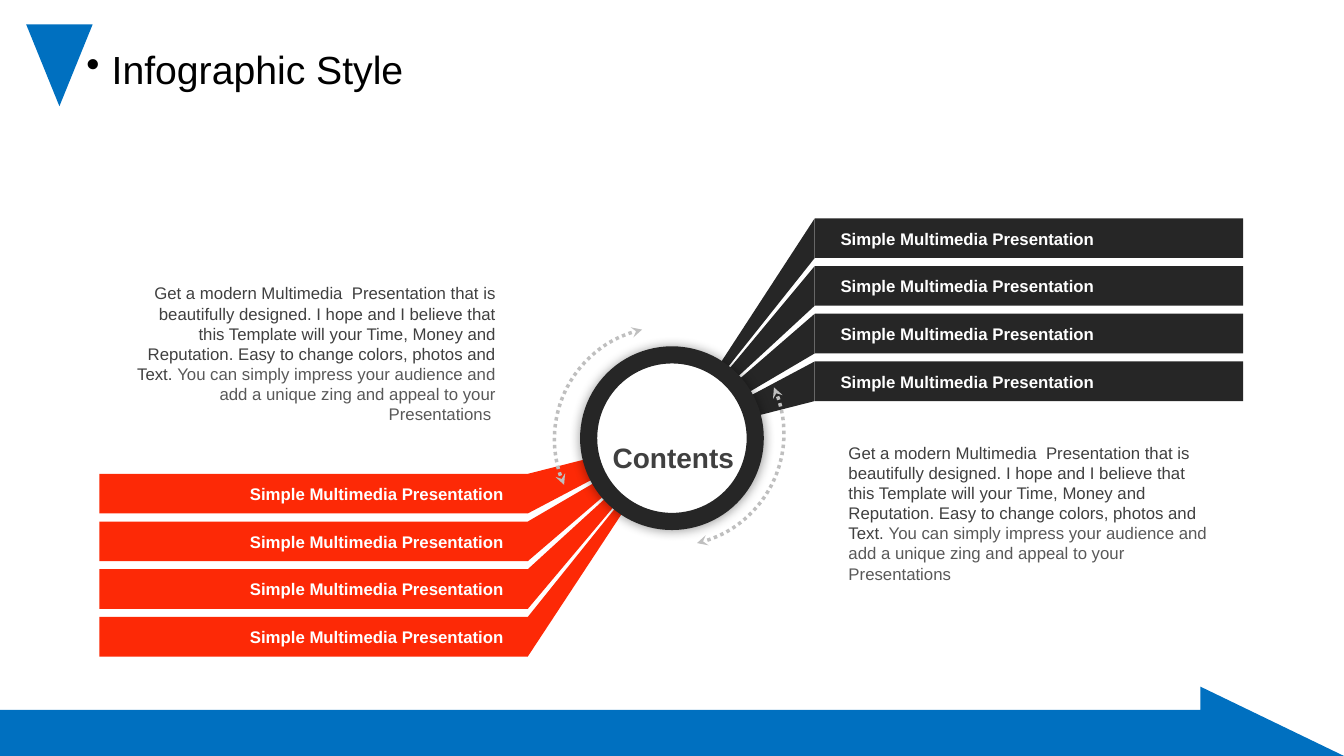
from lxml import etree
from pptx import Presentation
from pptx import util as u
from pptx.dml import color
from pptx.enum import dml, shapes, text
from pptx.oxml import ns

BLUE, DARK, RED, WHITE, GREY = "0070C0", "262626", "FD2906", "FFFFFF", "BFBFBF"
INK, SOFT_INK = "404040", "595959"
HUB = (480, 312.5)
LABEL = "Simple Multimedia Presentation"
BODY = ("Get a modern Multimedia  Presentation that is beautifully designed. "
        "I hope and I believe that this Template will your Time, Money and Reputation. "
        "Easy to change colors, photos and Text. ")
BODY_END = ("You can simply impress your audience and add a unique zing "
            "and appeal to your Presentations")


def rgb(value):
    """Turn a hex string into a colour."""
    return color.RGBColor.from_string(value)


def assign(target, values):
    """Set each named attribute on the target."""
    for name, value in values.items():
        setattr(target, name, value)


def add_xml(parent, tag, **attributes):
    """Append a DrawingML child element."""
    return etree.SubElement(parent, ns.qn(tag), attributes)


def paint(shape, fill=None, line=None, weight=1):
    """Give a shape flat fill and line and no inherited shadow."""
    shape.shadow.inherit = False
    if fill:
        shape.fill.solid()
        shape.fill.fore_color.rgb = rgb(fill)
    else:
        shape.fill.background()
    if line:
        shape.line.color.rgb = rgb(line)
        shape.line.width = u.Pt(weight)
    else:
        shape.line.fill.background()


def add_preset(page, kind, box, **look):
    """Draw a preset shape in a box given in points."""
    shape = page.shapes.add_shape(kind, *map(u.Pt, box))
    paint(shape, **look)
    return shape


def add_outline(page, points, fill):
    """Draw a closed polygon from points."""
    corners = [(u.Pt(x), u.Pt(y)) for x, y in points]
    builder = page.shapes.build_freeform(*corners[0])
    builder.add_line_segments(corners[1:], close=True)
    paint(builder.convert_to_shape(), fill)


def add_text(page, box, spans, size, bold=False, align=text.PP_ALIGN.LEFT):
    """Write coloured spans as one paragraph and return it."""
    frame = page.shapes.add_textbox(*map(u.Pt, box)).text_frame
    assign(frame, {"word_wrap": True, "vertical_anchor": text.MSO_ANCHOR.TOP})
    para = frame.paragraphs[0]
    para.alignment = align
    for wording, ink in spans:
        span = para.add_run()
        span.text = wording
        assign(span.font, {"name": "Arial", "size": u.Pt(size), "bold": bold})
        span.font.color.rgb = rgb(ink)
    return para


def add_heading(page, box):
    """Place the emblem and the bulleted title."""
    left, top, width, height = box
    add_preset(page, shapes.MSO_SHAPE.FLOWCHART_MERGE, (left, top, 47.5, 58.5), fill=BLUE)
    para = add_text(page, (left + 36, top + 15, width - 36, height - 15),
                    [("Infographic Style", "000000")], 28)
    para.line_spacing = 0.9
    properties = para._p.get_or_add_pPr()
    assign_indent = {"marL": str(u.Pt(18)), "indent": str(u.Pt(-18))}
    properties.attrib.update(assign_indent)
    add_xml(properties, "a:buChar", char="•")


def add_footer(page, box):
    """Draw the band that ends in a raised triangle."""
    left, top, width, height = box
    right, bottom, step = left + width, top + height, left + width - 102.5
    add_outline(page, [(left, top + 16.5), (step, top + 16.5), (step, top),
                       (right, bottom), (left, bottom)], BLUE)


def add_fan(page, box, fill, inner_x, label_x):
    """Draw four labelled bars with wedges that run to the hub."""
    left, top, width, height = box
    thick = 28.3
    pitch = (height - thick) / 3
    tops = [top + row * pitch for row in range(4)]
    for y in tops:
        add_preset(page, shapes.MSO_SHAPE.RECTANGLE, (left, y, width, thick), fill=fill)
        add_outline(page, [(inner_x, y), HUB, (inner_x, y + thick)], fill)
    for y in tops:
        add_text(page, (label_x, y + 3.5, 215, 21.8), [(LABEL, WHITE)], 12, bold=True)


def add_hub(page, box):
    """Draw the ring, its two dotted arcs and its caption."""
    left, top, width, height = box
    ring = add_preset(page, shapes.MSO_SHAPE.OVAL, box, fill=WHITE, line=DARK, weight=12.25)
    effects = ring._element.spPr.find(ns.qn("a:effectLst"))
    shadow = add_xml(effects, "a:outerShdw", blurRad=str(u.Pt(8)), dist="0", dir="0")
    add_xml(add_xml(shadow, "a:srgbClr", val="000000"), "a:alpha", val="40000")
    for dx, dy, turn in ((-21, -24, 224.1), (-24.5, -20, 44.5)):
        arc = add_preset(page, shapes.MSO_SHAPE.ARC,
                         (left + dx, top + dy, 160.5, 160.5), line=GREY, weight=2.5)
        arc.rotation = turn
        for index, angle in enumerate((111.57, 212.83)):
            arc.adjustments[index] = angle * 0.6
        arc.line.dash_style = dml.MSO_LINE.ROUND_DOT
        for end in ("a:headEnd", "a:tailEnd"):
            add_xml(arc.line._get_or_add_ln(), end, type="stealth")
    add_text(page, (left + 6.5, top + 57.5, width - 11, 31.5),
             [("Contents", INK)], 20, bold=True, align=text.PP_ALIGN.CENTER)


def add_body(page, box, align, ending):
    """Write the two-tone description."""
    add_text(page, box, [(BODY, INK), (ending, SOFT_INK)], 12, align=align)


def main():
    """Build and save the slide."""
    deck = Presentation()
    assign(deck, {"slide_width": u.Pt(960), "slide_height": u.Pt(540)})
    page = deck.slides.add_slide(deck.slide_layouts[6])
    add_footer(page, (0, 490.5, 960, 49.5))
    add_heading(page, (18.7, 17.4, 941, 72))
    add_fan(page, (582, 156, 306, 130.5), DARK, 582, 593.3)
    add_fan(page, (71, 338.5, 306, 130.5), RED, 377, 171.4)
    add_hub(page, (420.5, 253.5, 119, 119))
    add_body(page, (599, 312.5, 275, 94.5), text.PP_ALIGN.LEFT, BODY_END)
    add_body(page, (86.4, 198.7, 275, 108.7), text.PP_ALIGN.RIGHT, BODY_END + " ")
    deck.save("out.pptx")


if __name__ == "__main__":
    main()
